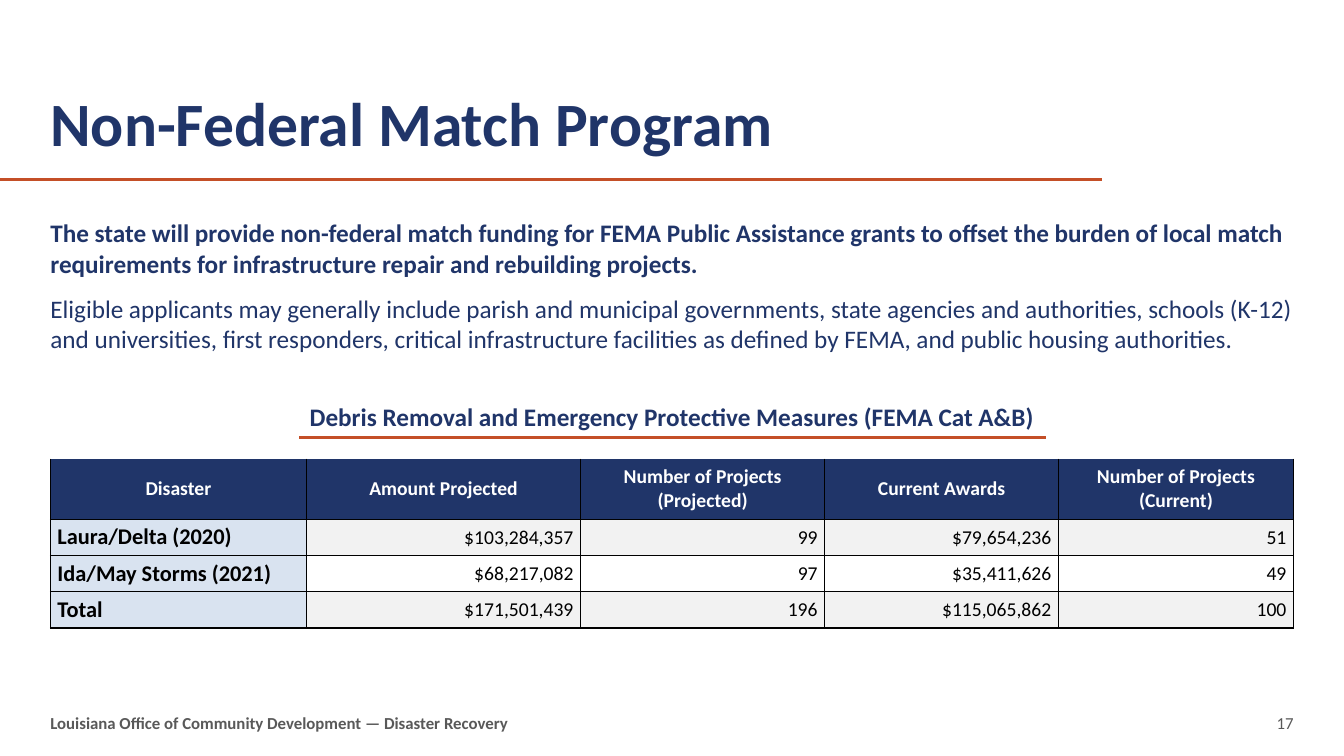
from dataclasses import dataclass

from lxml import etree
from pptx import Presentation
from pptx.dml.color import RGBColor
from pptx.enum import shapes, text
from pptx.oxml import ns
from pptx.util import Inches, Pt

LEFT, CENTER, RIGHT = text.PP_ALIGN.LEFT, text.PP_ALIGN.CENTER, text.PP_ALIGN.RIGHT
MIDDLE = text.MSO_ANCHOR.MIDDLE


@dataclass(frozen=True)
class Theme:
    font: str = "Calibri"
    navy: str = "203569"
    orange: str = "C44F27"
    grey: str = "595959"
    black: str = "000000"
    white: str = "FFFFFF"
    label_fill: str = "D9E3F0"
    band_fill: str = "F2F2F2"
    title_size: int = 44
    body_size: int = 18
    label_size: int = 16
    cell_size: int = 14
    footer_size: int = 12


class SlideBuilder:
    def __init__(self, prs, theme):
        self.theme = theme
        self.slide = prs.slides.add_slide(prs.slide_layouts[5])

    def run(self, p, words, size, color, bold=False):
        r = p.add_run()
        r.text = words
        r.font.name = self.theme.font
        r.font.size = Pt(size)
        r.font.bold = bold
        r.font.color.rgb = RGBColor.from_string(color)

    def frame(self, tf, anchor):
        """Give a text frame zero insets, wrapping and an anchor."""
        tf.margin_left = tf.margin_right = tf.margin_top = tf.margin_bottom = 0
        tf.word_wrap = True
        tf.auto_size = text.MSO_AUTO_SIZE.NONE
        tf.vertical_anchor = anchor

    def title(self, words, left, top, width, height):
        sp = self.slide.shapes.title
        sp.left, sp.top = Inches(left), Inches(top)
        sp.width, sp.height = Inches(width), Inches(height)
        self.frame(sp.text_frame, text.MSO_ANCHOR.BOTTOM)
        p = sp.text_frame.paragraphs[0]
        p.alignment = LEFT
        p.line_spacing = 0.9
        self.run(p, words, self.theme.title_size, self.theme.navy, True)

    def text(self, paragraphs, left, top, width, height, size, color,
             align=LEFT, anchor=MIDDLE, gap=0):
        """Add a text box from (words, bold) pairs, one per paragraph."""
        sp = self.slide.shapes.add_textbox(
            Inches(left), Inches(top), Inches(width), Inches(height))
        tf = sp.text_frame
        self.frame(tf, anchor)
        for i, (words, bold) in enumerate(paragraphs):
            p = tf.add_paragraph() if i else tf.paragraphs[0]
            p.alignment = align
            if i:
                p.space_before = Pt(gap)
            self.run(p, words, size, color, bold)

    def rule(self, x1, x2, y, weight):
        line = self.slide.shapes.add_connector(
            shapes.MSO_CONNECTOR.STRAIGHT, Inches(x1), Inches(y), Inches(x2), Inches(y))
        line.line.color.rgb = RGBColor.from_string(self.theme.orange)
        line.line.width = Pt(weight)
        etree.SubElement(line._element.spPr, ns.qn("a:effectLst"))

    def borders(self, cell, visible):
        """Draw the named sides (L, R, T, B) in black and clear the others."""
        props = cell._tc.get_or_add_tcPr()
        for side in "LRTB":
            ln = etree.SubElement(props, ns.qn(f"a:ln{side}"), w=str(Pt(1)))
            if side in visible:
                fill = etree.SubElement(ln, ns.qn("a:solidFill"))
                etree.SubElement(fill, ns.qn("a:srgbClr"), val=self.theme.black)
            else:
                etree.SubElement(ln, ns.qn("a:noFill"))

    def cell(self, cell, words, size, color, bold, align, fill, visible):
        cell.margin_left = cell.margin_right = Inches(0.07)
        cell.margin_top = cell.margin_bottom = 0
        cell.vertical_anchor = MIDDLE
        self.borders(cell, visible)
        if fill:
            cell.fill.solid()
            cell.fill.fore_color.rgb = RGBColor.from_string(fill)
        else:
            cell.fill.background()
        p = cell.text_frame.paragraphs[0]
        p.alignment = align
        if words:
            self.run(p, words, size, color, bold)

    def table(self, caption, header, records, left, top, widths, heights):
        t = self.theme
        tbl = self.slide.shapes.add_table(
            len(heights), len(widths), Inches(left), Inches(top),
            Inches(sum(widths)), Inches(sum(heights))).table
        for column, width in zip(tbl.columns, widths):
            column.width = Inches(width)
        for row, height in zip(tbl.rows, heights):
            row.height = Inches(height)

        tbl.cell(0, 0).merge(tbl.cell(0, len(widths) - 1))
        for c, words in enumerate(header):
            self.cell(tbl.cell(0, c), "" if c else caption,
                      t.body_size, t.navy, True, CENTER, None, "")
            self.cell(tbl.cell(1, c), words,
                      t.cell_size, t.white, True, CENTER, t.navy, "LRB")
        for i, record in enumerate(records):
            band = t.white if i % 2 else t.band_fill
            for c, words in enumerate(record):
                if c:
                    style = (t.cell_size, t.black, False, RIGHT, band)
                else:
                    style = (t.label_size, t.black, True, LEFT, t.label_fill)
                self.cell(tbl.cell(i + 2, c), words, *style, "LRTB")


def main():
    prs = Presentation()
    prs.slide_width, prs.slide_height = Inches(13.33), Inches(7.5)
    theme = Theme()
    s = SlideBuilder(prs, theme)
    margin, content_width = 0.5, 12.33

    s.rule(0, 10.93, 1.78, 2.25)
    s.title("Non-Federal Match Program", margin, 0.44, 10.43, 1.15)
    s.text([
        ("The state will provide non-federal match funding for FEMA Public Assistance "
         "grants to offset the burden of local match  requirements for infrastructure "
         "repair and rebuilding projects.", True),
        ("Eligible applicants may generally include parish and municipal governments, "
         "state agencies and authorities, schools (K-12) and universities, first "
         "responders, critical infrastructure facilities as defined by FEMA, and public "
         "housing authorities.", False),
    ], margin, 2.16, content_width, 1.5, theme.body_size, theme.navy,
        anchor=text.MSO_ANCHOR.TOP, gap=10.6)

    s.table(
        "Debris Removal and Emergency Protective Measures (FEMA Cat A&B)",
        ["Disaster", "Amount Projected", "Number of Projects (Projected)",
         "Current Awards", "Number of Projects (Current)"],
        [
            ["Laura/Delta (2020)", "$103,284,357", "99", "$79,654,236", "51"],
            ["Ida/May Storms (2021)", "$68,217,082", "97", "$35,411,626", "49"],
            ["Total", "$171,501,439", "196", "$115,065,862", "100"],
        ],
        margin, 3.75, [2.54, 2.72, 2.42, 2.32, 2.33], [0.8, 0.6, 0.36, 0.36, 0.36])
    s.rule(2.97, 10.37, 4.34, 2)

    s.text([("Louisiana Office of Community Development — Disaster Recovery", True)],
           margin, 7, 6.67, 0.35, theme.footer_size, theme.grey)
    s.text([("17", False)], 9.83, 7, 3, 0.35, theme.footer_size, theme.grey, RIGHT)

    prs.save("out.pptx")


if __name__ == "__main__":
    main()
